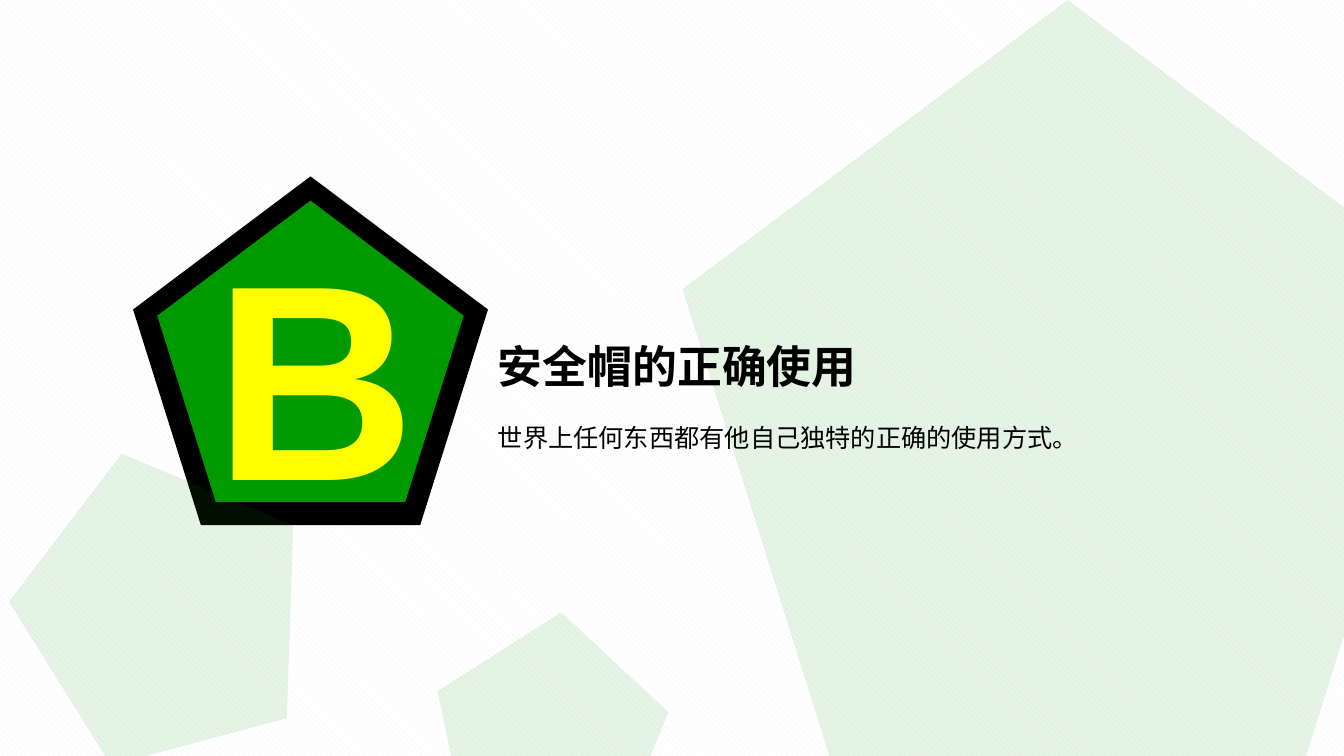
"""Build a section slide with pentagons, a letter badge and a heading."""
from lxml import etree
from pptx import Presentation
from pptx.dml.color import RGBColor
from pptx.enum.dml import MSO_PATTERN
from pptx.enum.shapes import MSO_SHAPE
from pptx.enum.text import MSO_AUTO_SIZE, PP_ALIGN
from pptx.oxml.ns import qn
from pptx.util import Inches, Pt

PENTAGON = MSO_SHAPE.REGULAR_PENTAGON
DIAGONAL = MSO_PATTERN.WIDE_DOWNWARD_DIAGONAL
LEFT, CENTER = PP_ALIGN.LEFT, PP_ALIGN.CENTER
GROW = MSO_AUTO_SIZE.SHAPE_TO_FIT_TEXT
FONT = "Arial"
GREEN, BLACK, YELLOW = "009900", "000000", "FFFF00"


def rgb(value):
    return RGBColor.from_string(value)


def set_background(slide):
    fill = slide.background.fill
    fill.patterned()
    fill.pattern = DIAGONAL
    fill.fore_color.rgb = rgb("F2F2F2")
    fill.back_color.rgb = rgb("FFFFFF")


def add_pentagon(shapes, box, color, opacity=100, rotation=0):
    sp = shapes.add_shape(PENTAGON, *map(Inches, box))
    sp.shadow.inherit = False
    sp.rotation = rotation
    sp.fill.solid()
    sp.fill.fore_color.rgb = rgb(color)
    sp.line.fill.background()
    if opacity < 100:
        clr = sp.element.spPr.find(qn("a:solidFill")).find(qn("a:srgbClr"))
        etree.SubElement(clr, qn("a:alpha")).set("val", str(opacity * 1000))


def add_text(shapes, box, text, size, color=BLACK, bold=False, align=LEFT):
    tf = shapes.add_textbox(*map(Inches, box)).text_frame
    tf.word_wrap = False
    tf.auto_size = GROW
    p = tf.paragraphs[0]
    p.text = text
    p.alignment = align
    font = p.runs[0].font
    font.name, font.size, font.bold = FONT, Pt(size), bold
    font.color.rgb = rgb(color)


def add_badge(shapes, letter):
    group = shapes.add_group_shape()
    add_pentagon(group.shapes, (1.32, 1.75, 3.52, 3.46), BLACK)
    add_pentagon(group.shapes, (1.56, 1.99, 3.04, 2.99), GREEN)
    add_text(shapes, (2.02, 1.95, 2.22, 3.45), letter, 199, YELLOW, True, CENTER)


def main():
    prs = Presentation()
    prs.slide_width, prs.slide_height = Inches(13.33), Inches(7.5)
    slide = prs.slides.add_slide(prs.slide_layouts[6])
    shapes = slide.shapes
    set_background(slide)
    add_pentagon(shapes, (6.77, 0, 7.64, 7.51), GREEN, 10)
    add_text(shapes, (4.84, 3.31, 3.79, 0.64), "安全帽的正确使用", 32, bold=True)
    add_badge(shapes, "B")
    add_text(shapes, (4.84, 4.14, 6.01, 0.4),
             "世界上任何东西都有他自己独特的正确的使用方式。", 18)
    add_pentagon(shapes, (0.13, 4.45, 2.92, 2.96), GREEN, 10, 345)
    add_pentagon(shapes, (4.31, 6.07, 2.3, 2.33), GREEN, 10, 5.2)
    prs.save("out.pptx")


if __name__ == "__main__":
    main()
